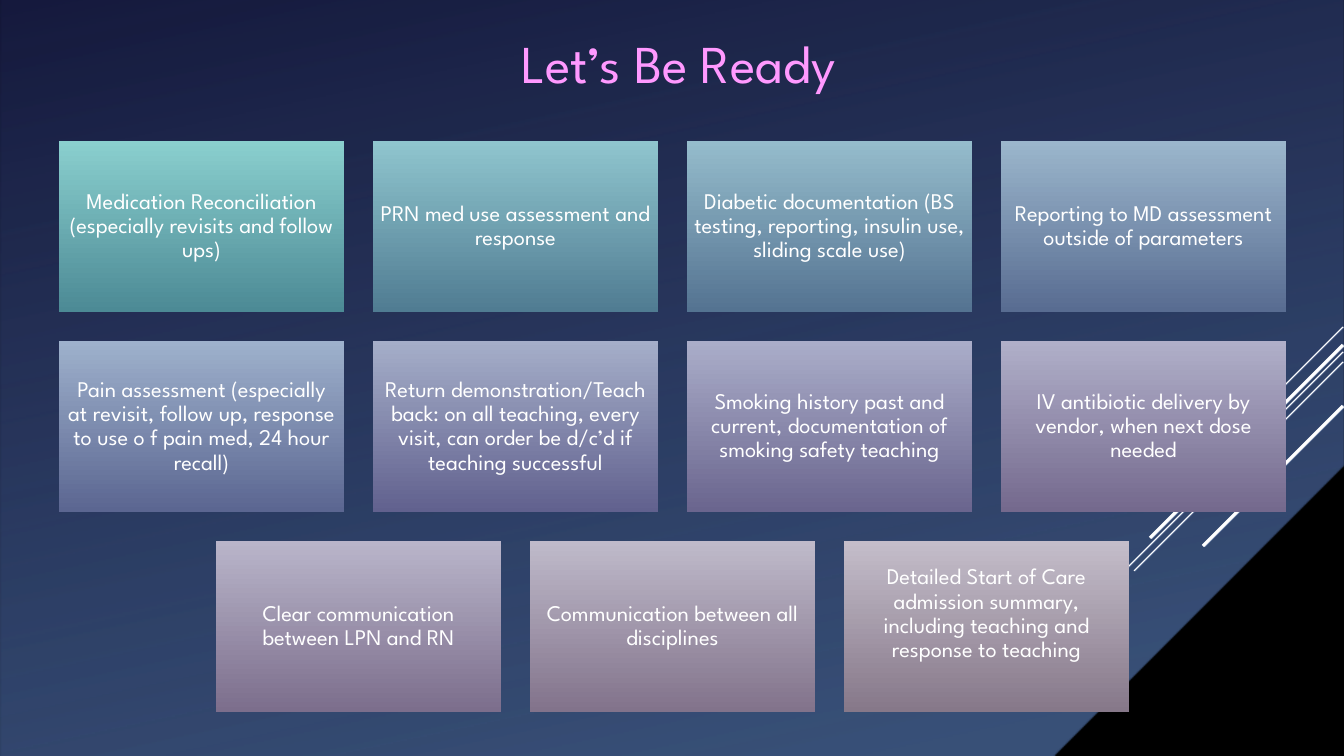
from lxml import etree
from pptx import Presentation
from pptx import util as u
from pptx.dml.color import RGBColor
from pptx.enum import shapes, text
from pptx.oxml import ns

WHITE = RGBColor(0xFF, 0xFF, 0xFF)
BLACK = RGBColor(0, 0, 0)
PINK = RGBColor(0xFF, 0x99, 0xFF)
BLUE = RGBColor(0x50, 0x72, 0xAA)
NAVY = RGBColor(0x1A, 0x1F, 0x4B)

WIDTH, HEIGHT = 1344, 756
TILE_WIDTH, TILE_HEIGHT, GAP, TILES_TOP = 285, 171, 29, 141

# Diagonal stripes: top, length in each direction, line width in points
STRIPES = [(327, 101, 0.75), (352, 329, 0.75), (362, 209, 0.75),
           (345, 193, 2.25), (406, 140, 2.25)]

# Tiles by row: wording, top colour, bottom colour
ROWS = [
    [("Medication Reconciliation (especially revisits and follow ups)",
      "8ACFCE", "4C8A95"),
     ("PRN med use assessment and response", "8FC5CE", "507C92"),
     ("Diabetic documentation (BS testing, reporting, insulin use, "
      "sliding scale use)", "95BCCC", "547391"),
     ("Reporting to MD assessment outside of parameters",
      "9BB6CC", "586C91")],
    [("Pain assessment (especially at revisit, follow up, response to use "
      "o f pain med, 24 hour recall)", "9EB1CC", "5B6691"),
     ("Return demonstration/Teach back: on all teaching, every visit, "
      "can order be d/c’d if teaching successful", "A5AEC9", "61618E"),
     ("Smoking history past and current, documentation of smoking "
      "safety teaching", "AAADC9", "6A658E"),
     ("IV antibiotic delivery by vendor, when next dose needed",
      "B0AFC9", "74698D")],
    [("Clear communication between LPN and RN", "B9B5CA", "7C6E8C"),
     ("Communication between all disciplines", "BFBACA", "82738B"),
     ("Detailed Start of Care admission summary, including teaching "
      "and response to teaching", "C4BDCA", "867889")],
]


def px(length):
    return u.Emu(round(length * 914400 / 100.8))


class SlideBuilder:
    font_name = "League Spartan"

    def __init__(self, presentation):
        self.slide = presentation.slides.add_slide(presentation.slide_layouts[5])
        background = self.slide.background.fill
        background.solid()
        background.fore_color.rgb = BLACK

    def add_text(self, shape, wording, size, color, inset, anchor, spacing):
        frame = shape.text_frame
        frame.word_wrap = True
        frame.auto_size = text.MSO_AUTO_SIZE.NONE
        frame.vertical_anchor = anchor
        frame.margin_left = frame.margin_right = px(inset)
        frame.margin_top = frame.margin_bottom = px(inset)
        paragraph = frame.paragraphs[0]
        paragraph.alignment = text.PP_ALIGN.CENTER
        paragraph.line_spacing = spacing
        run = paragraph.add_run()
        run.text = wording
        run.font.name = self.font_name
        run.font.size = u.Pt(size)
        run.font.color.rgb = color

    def title(self, wording, left, top, width, height):
        shape = self.slide.shapes.title
        shape.left, shape.top = px(left), px(top)
        shape.width, shape.height = px(width), px(height)
        self.add_text(shape, wording, 38, PINK, 10, text.MSO_ANCHOR.TOP, 1.0)
        # Bring the title in front of the backdrop
        self.slide.shapes._spTree.append(shape._element)

    def shape(self, kind, left, top, width, height):
        shape = self.slide.shapes.add_shape(
            kind, px(left), px(top), px(width), px(height))
        shape.shadow.inherit = False
        shape.line.fill.background()
        return shape

    def gradient(self, shape, start, end, angle=270, first_stop=0):
        shape.fill.gradient()
        shape.fill.gradient_angle = angle
        stops = shape.fill.gradient_stops
        stops[0].color.rgb, stops[1].color.rgb = start, end
        stops[0].position, stops[1].position = first_stop, 1

    def opacity(self, shape, *percents):
        colors = shape._element.spPr.iter(ns.qn("a:srgbClr"))
        for color, percent in zip(list(colors), percents):
            alpha = etree.SubElement(color, ns.qn("a:alpha"))
            alpha.set("val", str(percent * 1000))

    def backdrop(self):
        shade = self.shape(shapes.MSO_SHAPE.RECTANGLE, 0, 0, WIDTH, HEIGHT)
        shade.fill.solid()
        shade.fill.fore_color.rgb = BLACK
        self.opacity(shade, 20)
        panel = self.shape(shapes.MSO_SHAPE.SNIP_1_RECTANGLE, 0, 0, WIDTH, HEIGHT)
        panel.adjustments[0] = 0.384
        panel.rotation = 180
        panel._element.spPr.find(ns.qn("a:xfrm")).set("flipH", "1")
        self.gradient(panel, BLUE, NAVY, angle=258, first_stop=0.1)
        self.opacity(panel, 70, 80)

    def stripes(self, right):
        for top, length, weight in STRIPES:
            line = self.slide.shapes.add_connector(
                shapes.MSO_CONNECTOR.STRAIGHT,
                px(right), px(top), px(right - length), px(top + length))
            line.line.color.rgb = WHITE
            line.line.width = u.Pt(weight)
            etree.SubElement(line._element.spPr, ns.qn("a:effectLst"))

    def tile(self, left, top, wording, start, end):
        shape = self.shape(shapes.MSO_SHAPE.RECTANGLE,
                           left, top, TILE_WIDTH, TILE_HEIGHT)
        self.gradient(shape, RGBColor.from_string(start), RGBColor.from_string(end))
        self.add_text(shape, wording, 16, WHITE, 7, text.MSO_ANCHOR.MIDDLE, 0.9)
        return shape


def main():
    presentation = Presentation()
    presentation.slide_width, presentation.slide_height = px(WIDTH), px(HEIGHT)
    builder = SlideBuilder(presentation)

    # Backdrop, with stripes below and above the translucent panel
    builder.stripes(WIDTH)
    builder.backdrop()
    builder.stripes(WIDTH - 1)

    # Tiles, each row centred on the slide
    for row_number, row in enumerate(ROWS):
        row_width = len(row) * (TILE_WIDTH + GAP) - GAP
        left = (WIDTH - row_width + 1) // 2
        top = TILES_TOP + row_number * (TILE_HEIGHT + GAP)
        for column, (wording, start, end) in enumerate(row):
            tile = builder.tile(left + column * (TILE_WIDTH + GAP), top,
                                wording, start, end)
    # The last tile's text sits above the middle
    tile.text_frame.margin_bottom = px(32)

    # Title
    builder.title("Let’s Be Ready", 450, 20, 457, 128)

    presentation.save("out.pptx")


if __name__ == "__main__":
    main()
